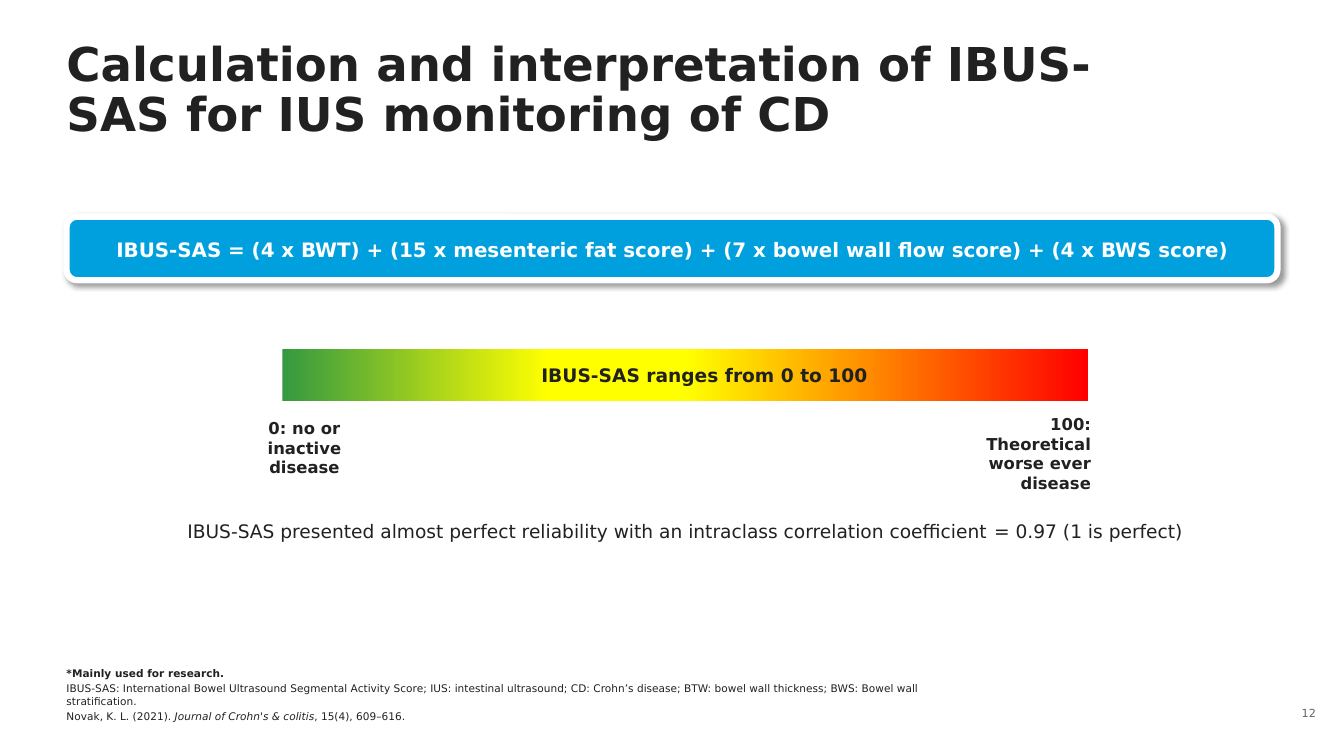
from dataclasses import dataclass

from lxml import etree
from pptx import Presentation
from pptx.dml.color import RGBColor
from pptx.enum.shapes import MSO_SHAPE
from pptx.enum.text import MSO_ANCHOR, PP_ALIGN
from pptx.oxml import parse_xml
from pptx.oxml.ns import nsdecls, qn
from pptx.util import Inches, Pt

LEFT, CENTER, RIGHT = PP_ALIGN.LEFT, PP_ALIGN.CENTER, PP_ALIGN.RIGHT
TOP, MIDDLE, BOTTOM = MSO_ANCHOR.TOP, MSO_ANCHOR.MIDDLE, MSO_ANCHOR.BOTTOM
RECTANGLE, ROUNDED = MSO_SHAPE.RECTANGLE, MSO_SHAPE.ROUNDED_RECTANGLE


@dataclass(frozen=True)
class Theme:
    font: str = "DejaVu Sans"
    ink: str = "212121"
    statement_ink: str = "242021"
    muted: str = "646464"
    white: str = "FFFFFF"
    banner: str = "00A0DF"
    scale: tuple = ((0, "349941"), (33, "FFFF00"), (50, "FFFF00"), (100, "FF0000"))
    title: float = 33.3
    formula: float = 14.2
    body: float = 13.3
    label: float = 11.7
    number: float = 8
    note: float = 7.5


THEME = Theme()


@dataclass(frozen=True)
class Box:
    left: float
    top: float
    width: float
    height: float

    def inside(self, left, top, width, height):
        return Box(self.left + left, self.top + top, width, height)

    def lengths(self):
        return [Inches(side) for side in (self.left, self.top, self.width, self.height)]


def add_text(page, box, paragraphs, size, color=THEME.ink, bold=False,
             align=LEFT, anchor=TOP, inset=(0.1, 0.05), spacing=None, gap=0):
    frame = page.shapes.add_textbox(*box.lengths()).text_frame
    across, down = (Inches(margin) for margin in inset)
    frame_format = {
        "word_wrap": True, "vertical_anchor": anchor,
        "margin_left": across, "margin_right": across,
        "margin_top": down, "margin_bottom": down,
    }
    for name, value in frame_format.items():
        setattr(frame, name, value)
    for index, spans in enumerate(paragraphs):
        para = frame.paragraphs[0] if index == 0 else frame.add_paragraph()
        para.alignment = align
        if spacing:
            para.line_spacing = spacing
        if index:
            para.space_before = Pt(gap)
        for words, changes in spans:
            span = para.add_run()
            span.text = words
            span_format = {"name": THEME.font, "size": Pt(size), "bold": bold, "color": color}
            span_format.update(changes)
            span.font.color.rgb = RGBColor.from_string(span_format.pop("color"))
            for name, value in span_format.items():
                setattr(span.font, name, value)


def add_line(page, box, words, size, **options):
    add_text(page, box, [[(words, {})]], size, **options)


def add_panel(page, box, kind):
    panel = page.shapes.add_shape(kind, *box.lengths())
    panel.shadow.inherit = False
    return panel


def set_soft_shadow(shape):
    effects = shape._element.spPr.find(qn("a:effectLst"))
    shadow = etree.SubElement(
        effects, qn("a:outerShdw"), blurRad=str(Pt(4)), dist=str(Pt(3)),
        dir="2700000", algn="tl", rotWithShape="0")
    color = etree.SubElement(shadow, qn("a:srgbClr"), val="000000")
    etree.SubElement(color, qn("a:alpha"), val="40000")


def set_gradient(shape, stops):
    shape.fill.background()
    marks = "".join(
        f'<a:gs pos="{place * 1000}"><a:srgbClr val="{color}"/></a:gs>'
        for place, color in stops)
    gradient = parse_xml(
        f'<a:gradFill {nsdecls("a")} rotWithShape="1"><a:gsLst>{marks}</a:gsLst>'
        '<a:lin ang="0" scaled="0"/></a:gradFill>')
    properties = shape._element.spPr
    properties.replace(properties.find(qn("a:noFill")), gradient)


def draw_title(page, box):
    add_line(page, box, "Calculation and interpretation of IBUS-SAS for IUS monitoring of CD",
             THEME.title, bold=True, inset=(0, 0), spacing=0.9)


def draw_formula(page, box):
    banner = add_panel(page, box, ROUNDED)
    banner.fill.solid()
    banner.fill.fore_color.rgb = RGBColor.from_string(THEME.banner)
    banner.line.color.rgb = RGBColor.from_string(THEME.white)
    banner.line.width = Pt(4.5)
    set_soft_shadow(banner)
    add_line(page, box.inside(0.05, 0.16, box.width - 0.1, 0.34),
             "IBUS-SAS = (4 x BWT) + (15 x mesenteric fat score)"
             " + (7 x bowel wall flow score) + (4 x BWS score)",
             THEME.formula, color=THEME.white, bold=True, align=CENTER)


def draw_scale(page, box):
    bar = add_panel(page, box, RECTANGLE)
    set_gradient(bar, THEME.scale)
    bar.line.fill.background()
    labels = [
        (box.inside(-0.54, 0.64, 1.52, 0.69), "0: no or inactive disease", THEME.label, CENTER),
        (box.inside(box.width - 1.23, 0.6, 1.36, 0.89),
         "100: Theoretical worse ever disease", THEME.label, RIGHT),
        (box.inside(2.47, 0.1, 3.95, 0.33), "IBUS-SAS ranges from 0 to 100", THEME.body, LEFT),
    ]
    for place, words, size, align in labels:
        add_line(page, place, words, size, bold=True, align=align)


def draw_statement(page, box):
    add_text(page, box, [[
        ("IBUS-SAS presented almost perfect reliability with an intraclass"
         " correlation coefficient", {"color": THEME.statement_ink}),
        (" = 0.97 (1 is perfect)", {}),
    ]], THEME.body, align=CENTER)


def draw_footer(page, box):
    add_text(page, box.inside(0, 0, 9.17, box.height), [
        [("*Mainly used for research.", {"bold": True})],
        [("IBUS-SAS: International Bowel Ultrasound Segmental Activity Score; "
          "IUS: intestinal ultrasound; CD: Crohn’s disease; BTW: bowel wall thickness; "
          "BWS: Bowel wall stratification.", {})],
        [("Novak, K. L. (2021). ", {}),
         ("Journal of Crohn's & colitis", {"italic": True}),
         (", 15(4), 609–616.", {})],
    ], THEME.note, anchor=BOTTOM, inset=(0, 0), gap=1.7)
    add_line(page, box.inside(box.width - 0.42, 0.02, 0.42, 0.36), "12", THEME.number,
             color=THEME.muted, align=RIGHT, anchor=MIDDLE)


def main():
    deck = Presentation()
    deck.slide_width, deck.slide_height = Inches(13.33), Inches(7.5)
    page = deck.slides.add_slide(deck.slide_layouts[6])
    draw_title(page, Box(0.66, 0.41, 11.1, 1.01))
    draw_formula(page, Box(0.66, 2.15, 12.01, 0.63))
    draw_scale(page, Box(2.8, 3.46, 7.99, 0.52))
    draw_statement(page, Box(1.27, 5.11, 11.05, 0.33))
    draw_footer(page, Box(0.66, 6.87, 12.49, 0.3))
    deck.save("out.pptx")


if __name__ == "__main__":
    main()
